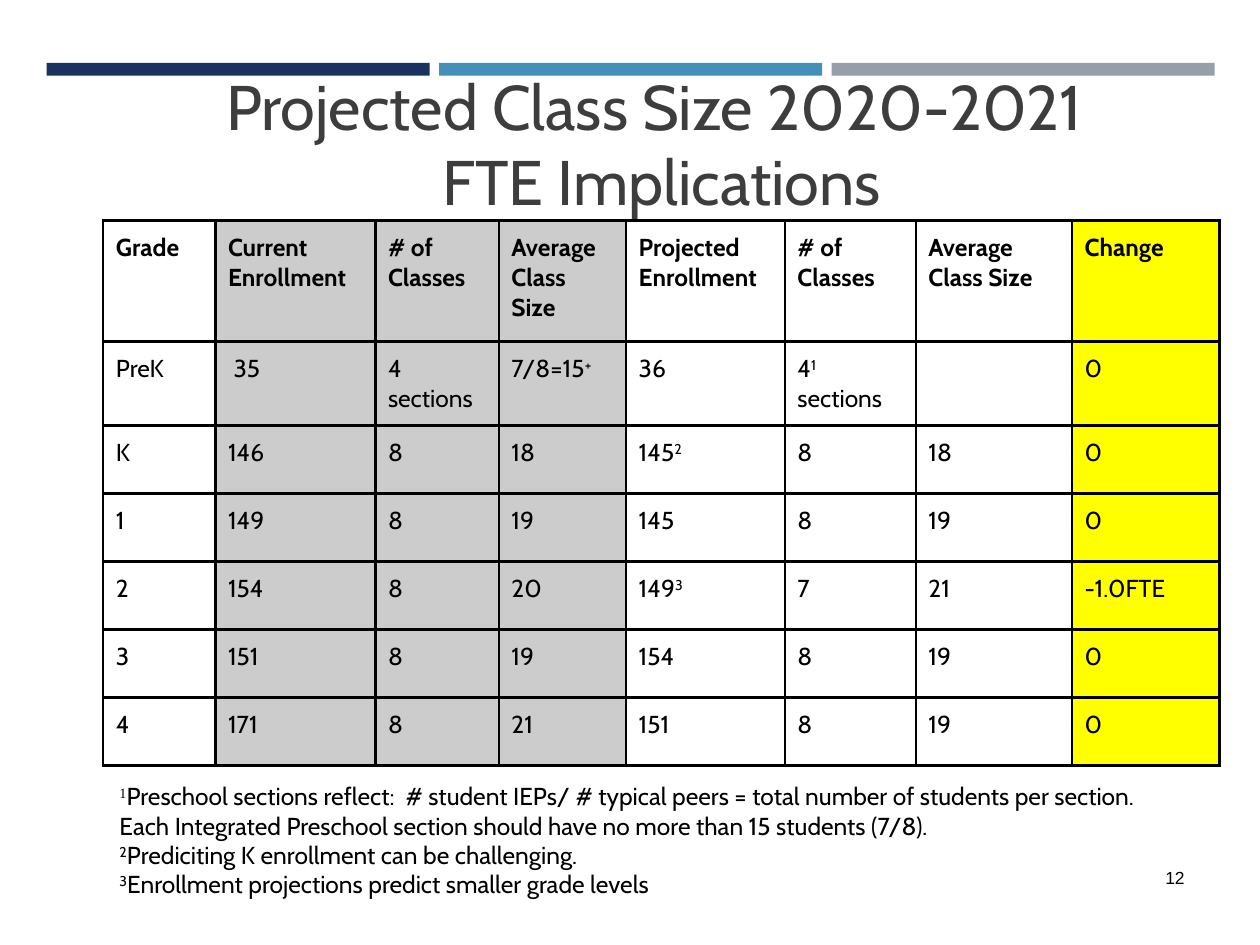
from lxml.etree import SubElement
from pptx import Presentation
from pptx.dml.color import RGBColor
from pptx.enum.shapes import MSO_SHAPE
from pptx.enum.text import MSO_ANCHOR, PP_ALIGN
from pptx.oxml.ns import qn
from pptx.util import Inches, Pt

COLORS = {
    "navy": "1A3260", "blue": "4590B8", "steel": "969FA7",
    "title": "3D3D3D", "black": "000000", "white": "FFFFFF",
    "current": "CCCCCC", "change": "FFFF00",
}


def write(frame, lines, size, color="black", font="Cabin", bold=False,
          align=PP_ALIGN.LEFT, inset=(0.1, 0.1)):
    """Fill a text frame or cell; text between ^ marks is superscript."""
    side, end = map(Inches, inset)
    frame.margin_left = frame.margin_right = side
    frame.margin_top = frame.margin_bottom = end
    text_frame = getattr(frame, "text_frame", frame)
    text_frame.word_wrap = True
    for number, line in enumerate(lines):
        paragraph = text_frame.add_paragraph() if number else text_frame.paragraphs[0]
        paragraph.alignment = align
        for part, words in enumerate(line.split("^")):
            if not words:
                continue
            run = paragraph.add_run()
            run.text = words
            run.font.size = Pt(size)
            run.font.name = font
            run.font.bold = bold
            run.font.color.rgb = RGBColor.from_string(COLORS[color])
            if part % 2:
                run.font._element.set("baseline", "30000")


def add_borders(cell, color="black", width=1.5):
    properties = cell._tc.get_or_add_tcPr()
    for position, side in enumerate(("lnL", "lnR", "lnT", "lnB")):
        border = properties.makeelement(qn(f"a:{side}"), {"w": str(Pt(width))})
        fill = SubElement(border, qn("a:solidFill"))
        SubElement(fill, qn("a:srgbClr"), val=COLORS[color])
        properties.insert(position, border)


prs = Presentation()
prs.slide_width, prs.slide_height = Inches(10), Inches(7.5)
slide = prs.slides.add_slide(prs.slide_layouts[6])

# Three bars across the top
for column, color in enumerate(("navy", "blue", "steel")):
    bar = slide.shapes.add_shape(
        MSO_SHAPE.RECTANGLE, Inches(0.37 + 3.115 * column), Inches(0.5),
        Inches(3.04), Inches(0.1))
    bar.shadow.inherit = False
    bar.fill.solid()
    bar.fill.fore_color.rgb = RGBColor.from_string(COLORS[color])
    bar.line.fill.background()

title = slide.shapes.add_textbox(Inches(1), Inches(0.57), Inches(8.5), Inches(1.13))
title.text_frame.vertical_anchor = MSO_ANCHOR.MIDDLE
write(title.text_frame, ["Projected Class Size 2020-2021 ", "FTE Implications"], 36,
      color="title", align=PP_ALIGN.CENTER, inset=(0.07, 0.07))

# Class size table
class_sizes = [
    ["Grade", "Current Enrollment", "# of Classes", "Average Class Size",
     "Projected Enrollment", "# of Classes", "Average Class Size", "Change"],
    ["PreK", " 35", "4 sections", "7/8=15^+^", "36", "4^1^ sections", "", "0"],
    ["K", "146", "8", "18", "145^2^", "8", "18", "0"],
    ["1", "149", "8", "19", "145", "8", "19", "0"],
    ["2", "154", "8", "20", "149^3^", "7", "21", "-1.0FTE"],
    ["3", "151", "8", "19", "154", "8", "19", "0"],
    ["4", "171", "8", "21", "151", "8", "19", "0"],
]
column_widths = [0.89, 1.27, 0.98, 1.01, 1.26, 1.04, 1.24, 1.17]
row_heights = [0.96, 0.56] + [0.54] * 5
column_fills = ["white"] + ["current"] * 3 + ["white"] * 3 + ["change"]

table = slide.shapes.add_table(
    len(row_heights), len(column_widths), Inches(0.82), Inches(1.75),
    Inches(sum(column_widths)), Inches(sum(row_heights))).table
for column, width in zip(table.columns, column_widths):
    column.width = Inches(width)
for row, height in zip(table.rows, row_heights):
    row.height = Inches(height)
for r, values in enumerate(class_sizes):
    for c, value in enumerate(values):
        cell = table.cell(r, c)
        cell.fill.solid()
        cell.fill.fore_color.rgb = RGBColor.from_string(COLORS[column_fills[c]])
        add_borders(cell)
        write(cell, [value], 14, bold=r == 0)

footnotes = slide.shapes.add_textbox(Inches(0.85), Inches(6.1), Inches(8.8), Inches(1.13))
write(footnotes.text_frame, [
    "^1^Preschool sections reflect:  # student IEPs/ # typical peers"
    " = total number of students per section.",
    "Each Integrated Preschool section should have no more than 15 students (7/8).",
    "^2^Prediciting K enrollment can be challenging.",
    "^3^Enrollment projections predict smaller grade levels",
], 14)
footnotes.text_frame.paragraphs[0].runs[0].font.name = "Times New Roman"

page_number = slide.shapes.add_textbox(Inches(7.42), Inches(6.83), Inches(2.08), Inches(0.5))
write(page_number.text_frame, ["12"], 10, font="Arial", align=PP_ALIGN.RIGHT,
      inset=(0.1, 0.05))

prs.save("out.pptx")
